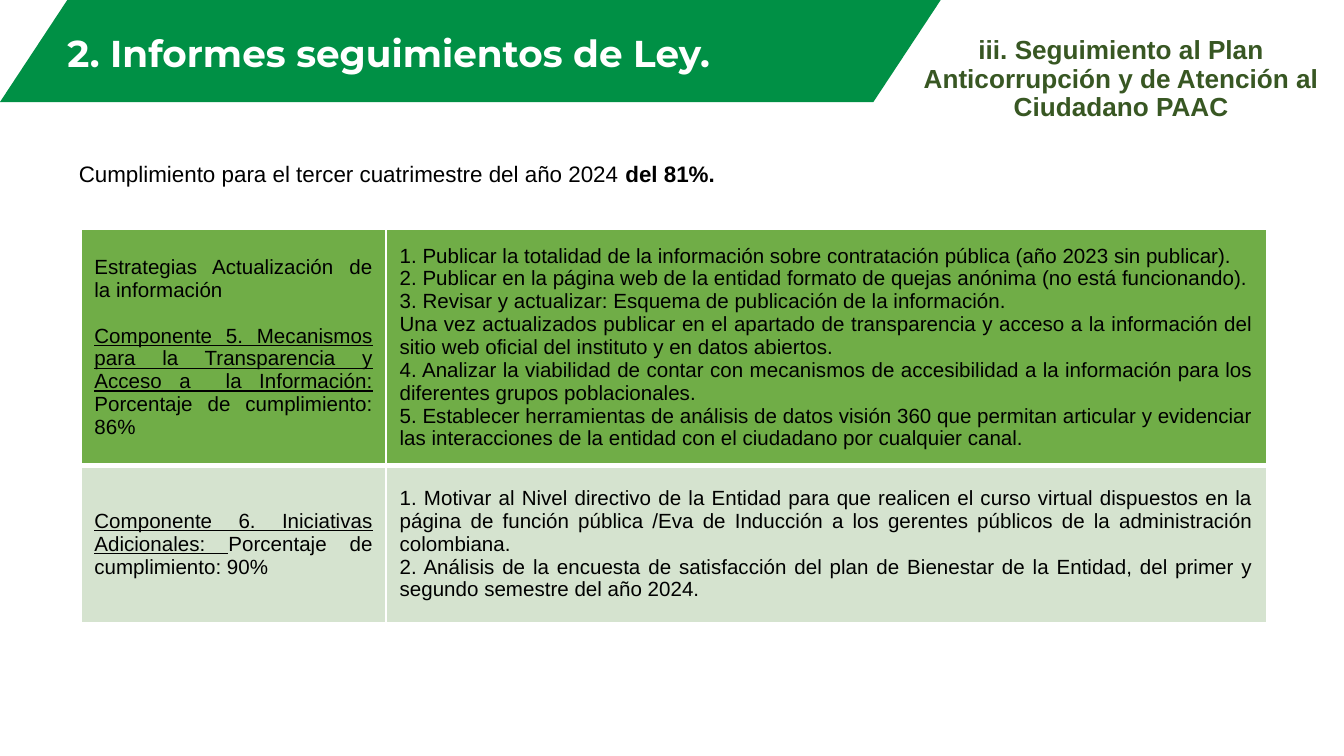
from lxml import etree
from pptx import Presentation
from pptx import util as u
from pptx.dml.color import RGBColor
from pptx.enum import shapes, text
from pptx.oxml.ns import qn

COLORS = {"banner": "009045", "white": "FFFFFF", "black": "000000",
          "heading": "385723", "row_dark": "70AD47", "row_light": "D5E3CF"}


def add_run(paragraph, words, size, color, font="Arial", bold=False, underline=False):
    run = paragraph.add_run()
    run.text = words
    run.font.name = font
    run.font.size = u.Pt(size)
    run.font.bold = bold
    run.font.underline = underline
    run.font.color.rgb = RGBColor.from_string(COLORS[color])


def add_box(left, top, width, height, align, spacing):
    frame = slide.shapes.add_textbox(u.Cm(left), u.Cm(top), u.Cm(width), u.Cm(height)).text_frame
    frame.word_wrap = True
    frame.paragraphs[0].alignment = align
    frame.paragraphs[0].line_spacing = spacing
    return frame


prs = Presentation()
prs.slide_width, prs.slide_height = u.Cm(25.4), u.Cm(14.29)
slide = prs.slides.add_slide(prs.slide_layouts[6])
CENTER, JUSTIFY = text.PP_ALIGN.CENTER, text.PP_ALIGN.JUSTIFY

# Title banner
banner = slide.shapes.add_shape(shapes.MSO_SHAPE.PARALLELOGRAM, 0, 0, u.Cm(17.78), u.Cm(1.93))
banner.adjustments[0] = 0.66
banner.shadow.inherit = False
banner.fill.solid()
banner.fill.fore_color.rgb = RGBColor.from_string(COLORS["banner"])
banner.line.fill.background()

title = add_box(-0.08, 0.46, 15.06, 1.09, CENTER, 0.9)
title.vertical_anchor = text.MSO_ANCHOR.BOTTOM
add_run(title.paragraphs[0], "2. Informes seguimientos de Ley. ", 20, "white", "Montserrat", bold=True)

# Compliance statement
compliance = add_box(1.24, 2.82, 14.5, 0.84, JUSTIFY, 1.15).paragraphs[0]
add_run(compliance, "Cumplimiento para el tercer cuatrimestre del año 2024 ", 12, "black")
add_run(compliance, "del 81%.", 12, "black", bold=True)

# Components table: each cell lists paragraphs, each paragraph lists (words, underlined)
components = [
    [
        [[("Estrategias Actualización de la información", False)],
         [("Componente 5. Mecanismos para la Transparencia y Acceso a  la Información: ", True),
          ("Porcentaje de cumplimiento: 86%", False)]],
        [[(action, False)] for action in (
            "1. Publicar la totalidad de la información sobre contratación pública (año 2023 sin publicar).",
            "2. Publicar en la página web de la entidad formato de quejas anónima (no está funcionando).",
            "3. Revisar y actualizar: Esquema de publicación de la información.",
            "Una vez actualizados publicar en el apartado de transparencia y acceso a la información "
            "del sitio web oficial del instituto y en datos abiertos.",
            "4. Analizar la viabilidad de contar con mecanismos de accesibilidad a la información "
            "para los diferentes grupos poblacionales.",
            "5. Establecer herramientas de análisis de datos visión 360 que permitan articular y "
            "evidenciar las interacciones de la entidad con el ciudadano por cualquier canal.")],
    ],
    [
        [[("Componente 6. Iniciativas Adicionales: ", True),
          ("Porcentaje de cumplimiento: 90%", False)]],
        [[(action, False)] for action in (
            "1. Motivar al Nivel directivo de la Entidad para que realicen el curso virtual dispuestos "
            "en la página de función pública /Eva de Inducción a los gerentes públicos de la "
            "administración colombiana.",
            "2. Análisis de la encuesta de satisfacción del plan de Bienestar de la Entidad, del "
            "primer y segundo semestre del año 2024.")],
    ],
]
table = slide.shapes.add_table(2, 2, u.Cm(1.53), u.Cm(4.34), u.Cm(22.41), u.Cm(7.44)).table
table.first_row = table.horz_banding = False
for column, width in zip(table.columns, (5.77, 16.64)):
    column.width = u.Cm(width)
for row, height in zip(table.rows, (4.45, 2.99)):
    row.height = u.Cm(height)

row_fills = ("row_dark", "row_light")
row_borders = ({"L": 1, "R": 1, "T": 1, "B": 3}, {"L": 1, "R": 1, "T": 3, "B": 1})
for r, component in enumerate(components):
    for c, paragraphs in enumerate(component):
        cell = table.cell(r, c)
        cell.vertical_anchor = text.MSO_ANCHOR.MIDDLE
        cell_props = cell._tc.get_or_add_tcPr()
        for side, points in row_borders[r].items():
            border = etree.SubElement(cell_props, qn(f"a:ln{side}"), w=str(u.Pt(points)))
            border_fill = etree.SubElement(border, qn("a:solidFill"))
            etree.SubElement(border_fill, qn("a:srgbClr"), val=COLORS["white"])
        cell.fill.solid()
        cell.fill.fore_color.rgb = RGBColor.from_string(COLORS[row_fills[r]])
        for i, pieces in enumerate(paragraphs):
            frame = cell.text_frame
            paragraph = frame.add_paragraph() if i else frame.paragraphs[0]
            paragraph.alignment = JUSTIFY
            if i and c == 0:
                paragraph.space_before = u.Pt(12.3)
            for words, underlined in pieces:
                add_run(paragraph, words, 11, "black", underline=underlined)

# Section heading
heading = add_box(17.15, 0.58, 8.08, 1.88, CENTER, 0.9).paragraphs[0]
add_run(heading, "iii. Seguimiento al Plan Anticorrupción y de Atención al Ciudadano PAAC",
        14, "heading", bold=True)

prs.save("out.pptx")
